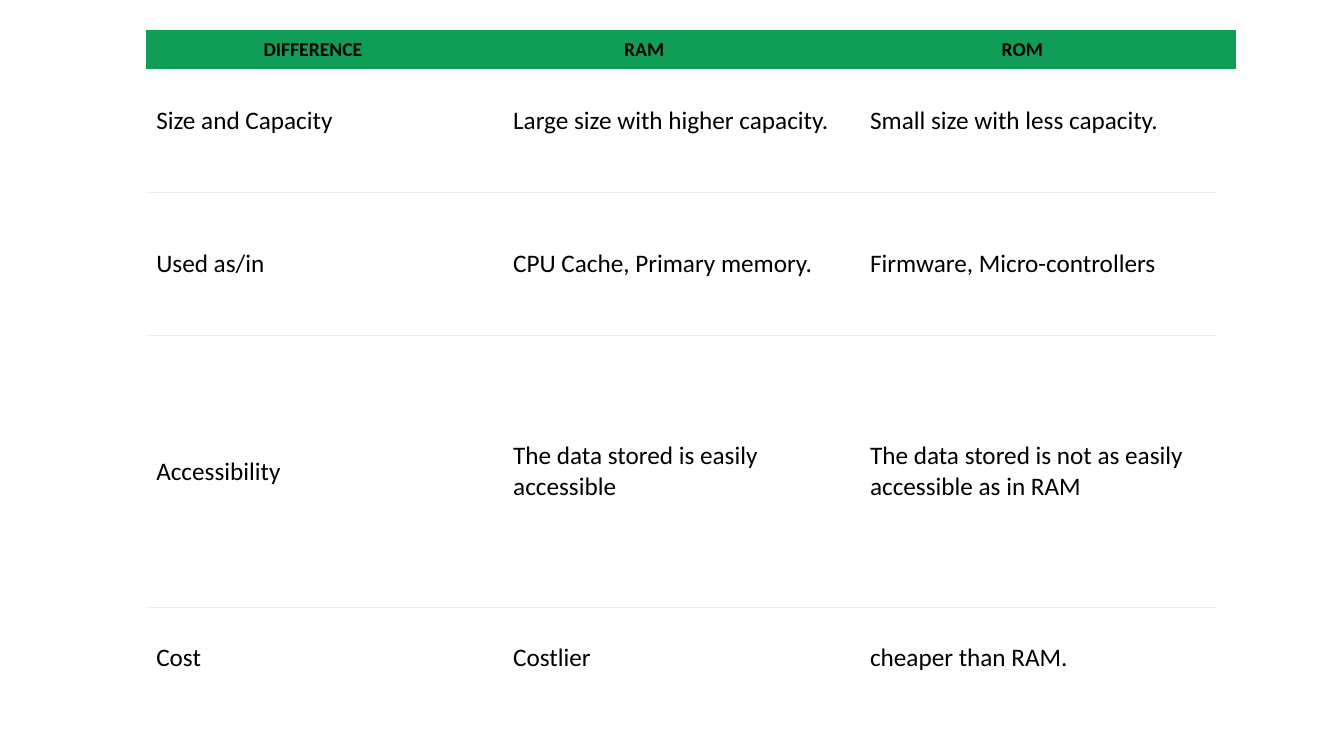
from lxml import etree
from pptx import Presentation
from pptx.dml.color import RGBColor
from pptx.enum.text import MSO_ANCHOR as Anchor, PP_ALIGN as Align
from pptx.oxml.ns import qn
from pptx.util import Inches, Pt

BLACK = RGBColor(0x00, 0x00, 0x00)
WHITE = RGBColor(0xFF, 0xFF, 0xFF)
GREEN = RGBColor(0x0F, 0x9D, 0x58)
RULE_GRAY = RGBColor(0xED, 0xED, 0xED)

HEADINGS = [["DIFFERENCE", "RAM", "ROM"]]
COMPARISON = [
    ["Size and Capacity", "Large size with higher capacity.", "Small size with less capacity."],
    ["Used as/in", "CPU Cache, Primary memory.", "Firmware, Micro-controllers"],
    ["Accessibility", "The data stored is easily accessible",
     "The data stored is not as easily accessible as in RAM"],
    ["Cost", "Costlier", "cheaper than RAM."],
]


def write_text(frame, text, font="Calibri", size=18, color=BLACK, bold=False, align=Align.LEFT):
    paragraph = frame.paragraphs[0]
    paragraph.alignment = align
    run = paragraph.add_run()
    run.text = text
    run.font.name = font
    run.font.size = Pt(size)
    run.font.bold = bold
    run.font.color.rgb = color


def set_borders(cell, ruled_sides):
    """Rule the given sides of a cell and clear the others."""
    properties = cell._tc.get_or_add_tcPr()
    for position, side in enumerate("LRTB"):
        line = etree.Element(qn(f"a:ln{side}"), w=str(Pt(0.5)))
        if side in ruled_sides:
            fill = etree.SubElement(line, qn("a:solidFill"))
            etree.SubElement(fill, qn("a:srgbClr"), val=str(RULE_GRAY))
        else:
            etree.SubElement(line, qn("a:noFill"))
        properties.insert(position, line)


class SlideBuilder:
    """Holds the current slide and adds styled tables to it."""

    def __init__(self, slide):
        self.slide = slide

    def table(self, rows, left, top, widths, heights, fill, margins, borders, **text_format):
        frame = self.slide.shapes.add_table(
            len(rows), len(widths), Inches(left), Inches(top),
            Inches(sum(widths)), Inches(sum(heights)))
        table = frame.table
        table.first_row = table.horz_banding = False
        for column, width in zip(table.columns, widths):
            column.width = Inches(width)
        for row, height, texts, sides in zip(table.rows, heights, rows, borders):
            row.height = Inches(height)
            for cell, text in zip(row.cells, texts):
                self.cell(cell, text, fill, margins, sides, **text_format)

    def cell(self, cell, text, fill, margins, sides, **text_format):
        side_margin, end_margin = margins
        cell.margin_left = cell.margin_right = Inches(side_margin)
        cell.margin_top = cell.margin_bottom = Inches(end_margin)
        cell.vertical_anchor = Anchor.MIDDLE
        cell.fill.solid()
        cell.fill.fore_color.rgb = fill
        set_borders(cell, sides)
        write_text(cell.text_frame, text, **text_format)


def main():
    presentation = Presentation()
    presentation.slide_width = Inches(13.33)
    presentation.slide_height = Inches(7.5)
    blank_layout = presentation.slide_layouts[6]
    builder = SlideBuilder(presentation.slides.add_slide(blank_layout))

    # Comparison rows, the last one without a closing rule
    builder.table(COMPARISON, 1.45, 0.49, [3.54] * 3, [1.42, 1.42, 2.7, 0.99],
                  WHITE, (0.1, 0.05), ["TB", "TB", "TB", "T"])

    # Heading band over the top of the comparison
    builder.table(HEADINGS, 1.45, 0.3, [3.31, 3.26, 4.24], [0.39],
                  GREEN, (0.03, 0.03), ["B"], size=14, bold=True, align=Align.CENTER)

    presentation.save("out.pptx")


if __name__ == "__main__":
    main()
